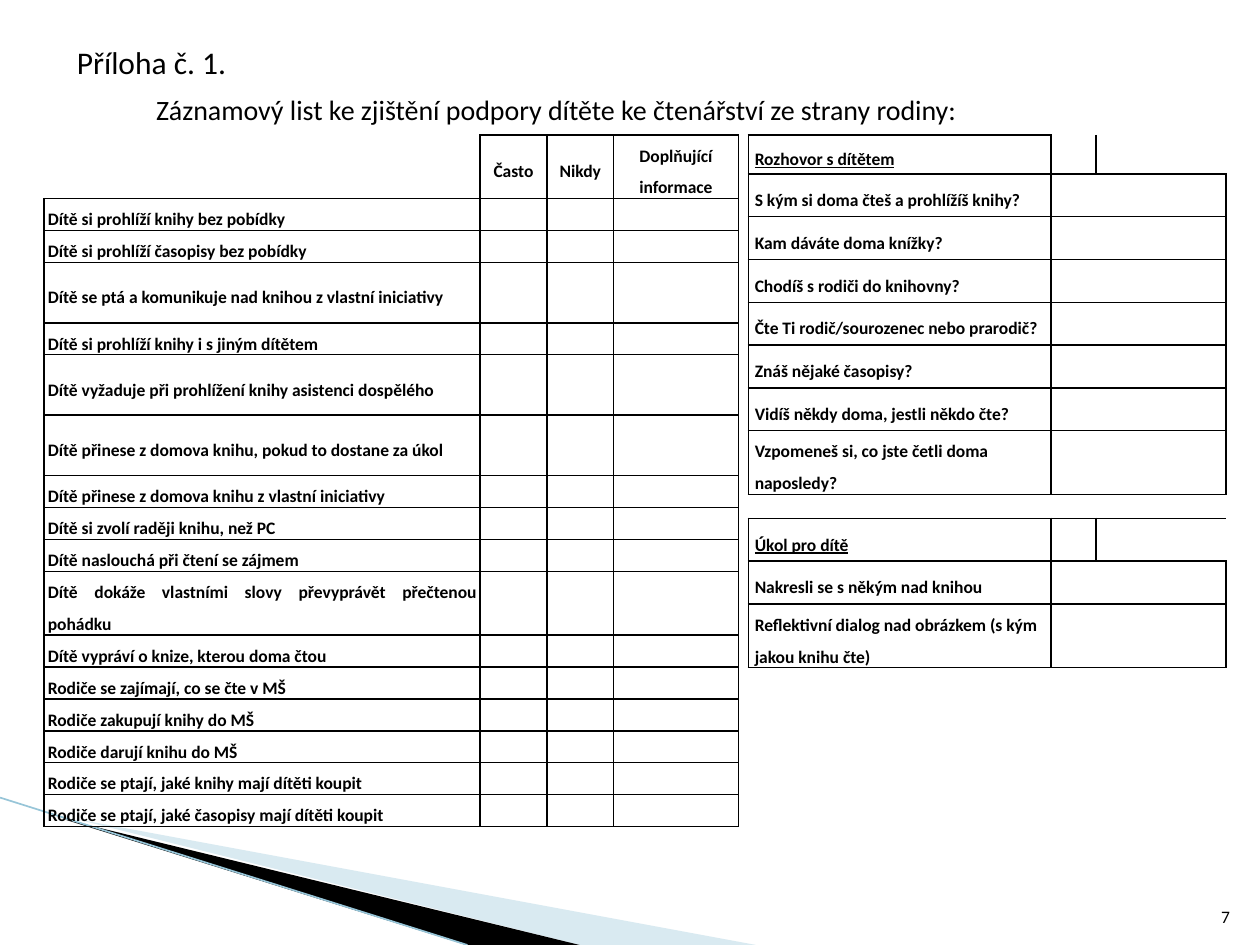
from lxml.etree import SubElement
from pptx import Presentation
from pptx.dml.color import RGBColor
from pptx.enum.shapes import MSO_CONNECTOR
from pptx.enum.text import MSO_ANCHOR as Anchor, MSO_AUTO_SIZE as AutoSize, PP_ALIGN as Align
from pptx.oxml.ns import qn
from pptx.util import Inches, Pt

COLORS = {"text": "000000", "pale": "A0CBDC", "dark": "000000", "edge": "97C5D8"}
NO_GRID_STYLE = "{2D5ABB26-0587-4C30-8999-92F81FD0307C}"

deck = Presentation()
deck.slide_width, deck.slide_height = Inches(10), Inches(7.5)
page = deck.slides.add_slide(deck.slide_layouts[5])
unit = deck.slide_width // 100  # the grid has 100 columns and 75 rows


def format_paragraph(para, size, align, bold=False):
    para.alignment = align
    para.font.size, para.font.name, para.font.bold = Pt(size), "Calibri", bold
    para.font.color.rgb = RGBColor.from_string(COLORS["text"])


def add_form(left, top, columns, rows, texts, aligns, inset, open_sides):
    """Draw a bordered table; open_sides maps (row, column) to the only sides drawn."""
    frame = page.shapes.add_table(len(rows), len(columns), int(left * unit), int(top * unit),
                                  int(sum(columns) * unit), int(sum(rows) * unit))
    table = frame.table
    table.first_row = table.horz_banding = False
    table._tbl.tblPr.find(qn("a:tableStyleId")).text = NO_GRID_STYLE
    for column, width in zip(table.columns, columns):
        column.width = int(width * unit)
    for row, height in zip(table.rows, rows):
        row.height = int(height * unit)
    for r in range(len(rows)):
        for c in range(len(columns)):
            cell = table.cell(r, c)
            cell.margin_left = cell.margin_right = int(inset * unit)
            cell.margin_top = cell.margin_bottom = 0
            cell.vertical_anchor = Anchor.MIDDLE
            para = cell.text_frame.paragraphs[0]
            format_paragraph(para, 10, aligns[min(c, 1)], bold=True)
            if texts.get((r, c)):
                para.line_spacing = 1.5
                para.add_run().text = texts[r, c]
            else:
                SubElement(para._p, qn("a:endParaRPr"), sz="1000")
            properties = cell._tc.get_or_add_tcPr()
            for side in "LRTB":
                if side in open_sides.get((r, c), "LRTB"):
                    line = SubElement(properties, qn(f"a:ln{side}"), w=str(Pt(1)))
                    fill = SubElement(line, qn("a:solidFill"))
                    SubElement(fill, qn("a:srgbClr"), val=COLORS["text"])
            cell.fill.background()
    return table


# Corner decoration
wedges = [
    ("pale", [(5.5, 65.1), (59.5, 75), (45.6, 75), (5.5, 65)]),
    ("dark", [(5.3, 64.9), (45.7, 75), (37.2, 75), (5.4, 65)]),
]
for color, points in wedges:
    builder = page.shapes.build_freeform(*points[0], scale=unit)
    builder.add_line_segments(points[1:], close=True)
    wedge = builder.convert_to_shape()
    wedge.shadow.inherit = False
    wedge.fill.solid()
    wedge.fill.fore_color.rgb = RGBColor.from_string(COLORS[color])
    wedge.line.fill.background()
    if color == "pale":
        SubElement(wedge._element.spPr.find(f".//{qn('a:srgbClr')}"), qn("a:alpha"), val="40000")

edge = page.shapes.add_connector(MSO_CONNECTOR.STRAIGHT, 0, int(63.3 * unit),
                                 int(37.1 * unit), 75 * unit)
edge.line.color.rgb = RGBColor.from_string(COLORS["edge"])
edge.line.width = Pt(0.95)
SubElement(edge._element.spPr, qn("a:effectLst"))

# Headings and page number
heading = page.shapes.title
subheading = page.shapes.add_textbox(0, 0, unit, unit)
number = page.shapes.add_textbox(0, 0, unit, unit)
labels = [
    (heading, "Příloha č. 1.", (5.1, 2.9, 31.5, 4), 18, Align.LEFT, Anchor.TOP),
    (subheading, "Záznamový list ke zjištění podpory dítěte ke čtenářství ze strany rodiny:",
     (11.4, 6.8, 74, 3.7), 16, Align.JUSTIFY, Anchor.MIDDLE),
    (number, "7", (94.6, 70.1, 4, 4), 10, Align.RIGHT, Anchor.BOTTOM),
]
for box, text, place, size, align, anchor in labels:
    box.left, box.top, box.width, box.height = (int(length * unit) for length in place)
    box.text_frame.word_wrap = True
    box.text_frame.auto_size = AutoSize.NONE
    box.text_frame.vertical_anchor = anchor
    box.text_frame.text = text
    format_paragraph(box.text_frame.paragraphs[0], size, align)

# Observation sheet
observations = [
    "Dítě si prohlíží knihy bez pobídky",
    "Dítě si prohlíží časopisy bez pobídky",
    "Dítě se ptá a komunikuje nad knihou z vlastní iniciativy",
    "Dítě si prohlíží knihy i s jiným dítětem",
    "Dítě vyžaduje při prohlížení knihy asistenci dospělého",
    "Dítě přinese z domova knihu, pokud to dostane za úkol",
    "Dítě přinese z domova knihu z vlastní iniciativy",
    "Dítě si zvolí raději knihu, než PC",
    "Dítě naslouchá při čtení se zájmem",
    "Dítě dokáže vlastními slovy převyprávět přečtenou pohádku",
    "Dítě vypráví o knize, kterou doma čtou",
    "Rodiče se zajímají, co se čte v MŠ",
    "Rodiče zakupují knihy do MŠ",
    "Rodiče darují knihu do MŠ",
    "Rodiče se ptají, jaké knihy mají dítěti koupit",
    "Rodiče se ptají, jaké časopisy mají dítěti koupit",
]
sheet_texts = {(0, c): text for c, text in enumerate(["", "Často", "Nikdy", "Doplňující informace"])}
sheet_texts.update({(r, 0): text for r, text in enumerate(observations, 1)})
tall_rows = {0, 3, 5, 6, 10}
sheet_rows = [4.8 if r in tall_rows else 2.4 for r in range(len(observations) + 1)]
add_form(3.5, 10.7, [34.6, 5.3, 5.3, 9.9], sheet_rows, sheet_texts,
         (Align.JUSTIFY, Align.CENTER), 0.3, {(0, 0): "RB"})

# Interview and task for the child
questions = [
    "Rozhovor s dítětem",
    "S kým si doma čteš a prohlížíš knihy?",
    "Kam dáváte doma knížky?",
    "Chodíš s rodiči do knihovny?",
    "Čte Ti rodič/sourozenec nebo prarodič?",
    "Znáš nějaké časopisy?",
    "Vidíš někdy doma, jestli někdo čte?",
    "Vzpomeneš si, co jste četli doma naposledy?",
    "",
    "Úkol pro dítě",
    "Nakresli se s někým nad knihou",
    "Reflektivní dialog nad obrázkem (s kým jakou knihu čte)",
]
section_rows, gap_row = (0, 9), 8
open_sides = {(gap_row, c): "TB" if c == 0 else "T" for c in range(4)}
for r in section_rows:
    open_sides.update({(r, c): "LB" if c == 1 else "B" for c in range(1, 4)})
interview_rows = [{0: 3.1, gap_row: 1.9}.get(r, 3.4) for r in range(len(questions))]
interview = add_form(59.4, 10.7, [24, 3.6, 3.6, 6.7], interview_rows,
                     {(r, 0): text for r, text in enumerate(questions)},
                     (Align.LEFT, Align.LEFT), 0.5, open_sides)
for r in range(len(questions)):
    if r in section_rows:
        interview.cell(r, 0).text_frame.paragraphs[0].font.underline = True
    elif r != gap_row:
        interview.cell(r, 1).merge(interview.cell(r, 3))

deck.save("out.pptx")
